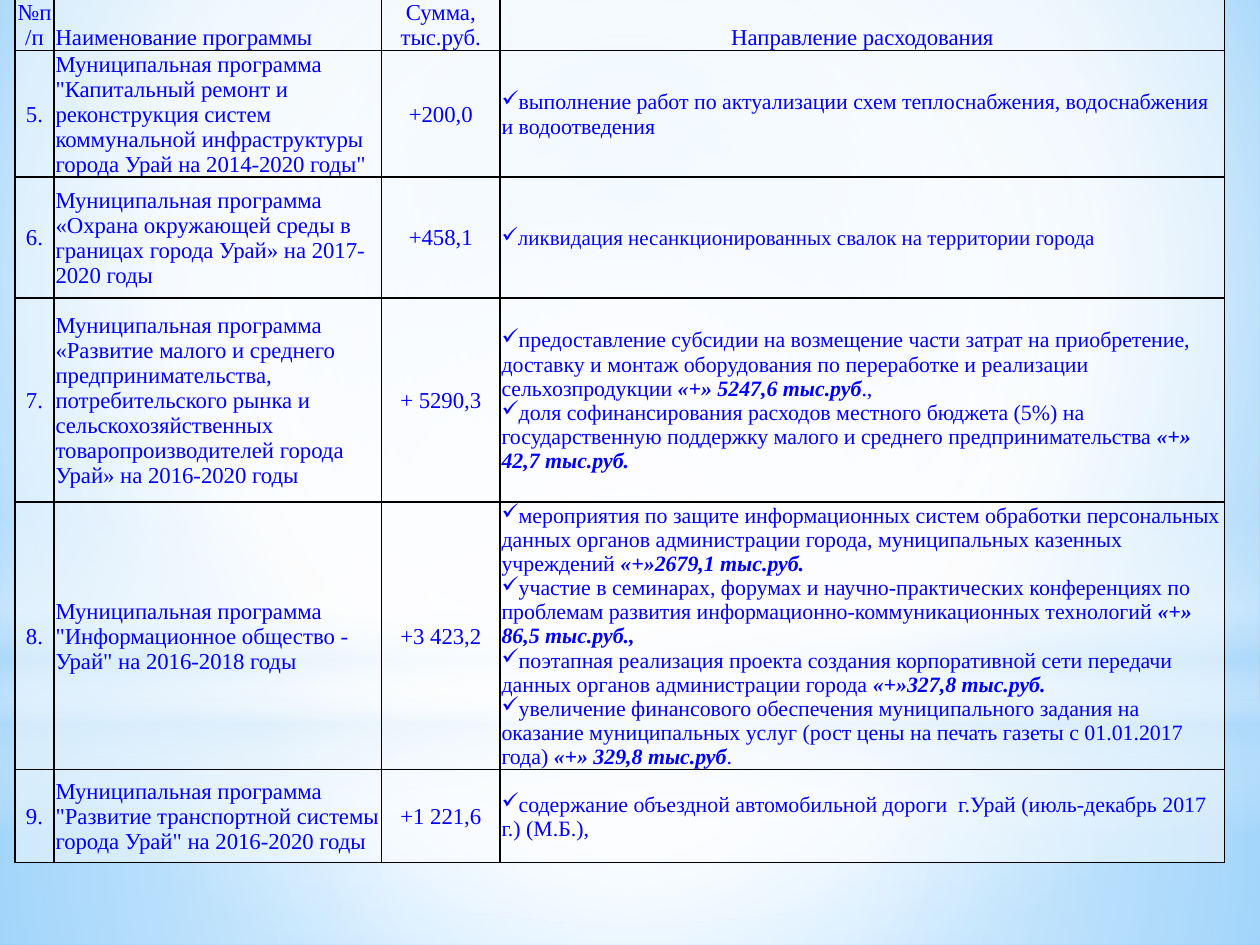
from lxml.etree import SubElement
from pptx import Presentation
from pptx.dml.color import RGBColor
from pptx.enum.shapes import MSO_SHAPE as Preset
from pptx.enum.text import MSO_ANCHOR as Anchor, PP_ALIGN as Align
from pptx.oxml.ns import qn
from pptx.util import Cm, Pt

COLORS = {
    "text": "0000FF", "border": "000000", "white": "FFFFFF",
    "haze": "B4DCFA", "sky": "9ED5FF", "deep": "5BB9FF",
}
FONT = "Times New Roman"
COLUMN_WIDTHS = [0.79, 6.6, 2.39, 14.6]
ROW_HEIGHTS = [1.03, 2.54, 2.44, 4.11, 5.38, 1.88]
HEADINGS = ["№п/п", "Наименование программы", "Сумма, тыс.руб.", "Направление расходования"]
PROGRAMS = [
    ("5.", 'Муниципальная программа "Капитальный ремонт и реконструкция систем коммунальной '
     'инфраструктуры города Урай на 2014-2020 годы"', "+200,0", 12.5,
     [["выполнение работ по актуализации схем теплоснабжения, водоснабжения и водоотведения"]]),
    ("6.", "Муниципальная программа «Охрана окружающей среды в границах города Урай» "
     "на 2017-2020 годы", "+458,1", 12,
     [["ликвидация несанкционированных свалок на территории города"]]),
    ("7.", "Муниципальная программа «Развитие малого и среднего предпринимательства, "
     "потребительского рынка и сельскохозяйственных товаропроизводителей города Урай» "
     "на 2016-2020 годы", "+ 5290,3", 12.5,
     [["предоставление субсидии на возмещение части затрат на приобретение, доставку и монтаж "
       "оборудования по переработке и реализации сельхозпродукции ", "«+» 5247,6 тыс.руб", ".,"],
      ["доля софинансирования расходов местного бюджета (5%) на государственную поддержку "
       "малого и среднего предпринимательства ", "«+» 42,7 тыс.руб."]]),
    ("8.", 'Муниципальная программа "Информационное общество - Урай" на 2016-2018 годы',
     "+3 423,2", 12.5,
     [["мероприятия по защите информационных систем обработки персональных данных органов "
       "администрации города, муниципальных казенных учреждений ", "«+»2679,1 тыс.руб."],
      ["участие в семинарах, форумах и научно-практических конференциях по проблемам развития "
       "информационно-коммуникационных технологий ", "«+» 86,5 тыс.руб.,"],
      ["поэтапная реализация проекта создания корпоративной сети передачи данных органов "
       "администрации города ", "«+»327,8 тыс.руб."],
      ["увеличение финансового обеспечения муниципального задания на оказание муниципальных "
       "услуг (рост цены на печать газеты с 01.01.2017 года) ", "«+» 329,8 тыс.руб", "."]]),
    ("9.", 'Муниципальная программа "Развитие транспортной системы города Урай" '
     "на 2016-2020 годы", "+1 221,6", 12.5,
     [["содержание объездной автомобильной дороги  г.Урай (июль-декабрь 2017 г.) (М.Б.),"]]),
]


def add_color(parent, name, opacity=100):
    color = SubElement(parent, qn("a:srgbClr"), val=COLORS[name])
    if opacity < 100:
        SubElement(color, qn("a:alpha"), val=str(opacity * 1000))


def set_gradient(owner, stops, focus=None):
    solid = owner.find(qn("a:solidFill"))
    gradient = SubElement(owner, qn("a:gradFill"), rotWithShape="1")
    owner.replace(solid, gradient)
    stop_list = SubElement(gradient, qn("a:gsLst"))
    for position, name, opacity in stops:
        stop = SubElement(stop_list, qn("a:gs"), pos=str(position * 1000))
        add_color(stop, name, opacity)
    if focus:
        circle = SubElement(gradient, qn("a:path"), path="circle")
        sides = {side: str(value * 1000) for side, value in zip("ltrb", focus)}
        SubElement(circle, qn("a:fillToRect"), **sides)
    else:
        SubElement(gradient, qn("a:lin"), ang="5400000", scaled="0")


def add_glow(slide, preset, top, height, stops, focus=None):
    glow = slide.shapes.add_shape(preset, 0, Cm(top), Cm(25.4), Cm(height))
    glow.shadow.inherit = False
    glow.line.fill.background()
    glow.fill.solid()
    set_gradient(glow._element.spPr, stops, focus)


def add_sky(slide):
    slide.background.fill.solid()
    set_gradient(slide._element.cSld.bg.bgPr,
                 [(0, "sky", 100), (60, "white", 100), (100, "deep", 100)], (20, 10, 20, 60))
    center = (50, 50, 50, 50)
    add_glow(slide, Preset.RECTANGLE, 14.17, 4.88,
             [(0, "white", 91), (37, "white", 76), (100, "haze", 79)], center)
    add_glow(slide, Preset.RECTANGLE, 0, 14.17,
             [(0, "white", 89), (48, "white", 62), (100, "haze", 79)], center)
    add_glow(slide, Preset.RECTANGLE, 10.46, 6.35,
             [(0, "white", 0), (29, "white", 30), (45, "haze", 40),
              (55, "white", 26), (65, "haze", 60), (100, "white", 0)])
    add_glow(slide, Preset.OVAL, 4.45, 14.17, [(0, "white", 100), (56, "white", 0)], center)


def style_cell(cell, anchor):
    cell.vertical_anchor = anchor
    cell.margin_left = cell.margin_right = cell.margin_top = Cm(0.03)
    cell.margin_bottom = 0
    properties = cell._tc.get_or_add_tcPr()
    for side in ("a:lnL", "a:lnR", "a:lnT", "a:lnB"):
        border = SubElement(properties, qn(side), w=str(Pt(1)))
        add_color(SubElement(border, qn("a:solidFill")), "border")
    add_color(SubElement(properties, qn("a:solidFill")), "white", 47)


def style_run(run, size, emphasis=False):
    run.font.name = FONT
    run.font.size = Pt(size)
    run.font.color.rgb = RGBColor.from_string(COLORS["text"])
    run.font.bold = run.font.italic = emphasis


def fill_label(cell, label, align):
    paragraph = cell.text_frame.paragraphs[0]
    paragraph.text = label
    paragraph.alignment = align
    style_run(paragraph.runs[0], 13)


def fill_expenses(cell, expenses, size):
    frame = cell.text_frame
    for index, parts in enumerate(expenses):
        paragraph = frame.add_paragraph() if index else frame.paragraphs[0]
        properties = paragraph._p.get_or_add_pPr()
        properties.set("marL", "0")
        properties.set("indent", "0")
        SubElement(properties, qn("a:buChar"), char="✓")
        for position, part in enumerate(parts):
            run = paragraph.add_run()
            run.text = part
            style_run(run, size, emphasis=position == 1)


def add_programs_table(slide, left, top):
    table = slide.shapes.add_table(
        len(ROW_HEIGHTS), len(COLUMN_WIDTHS), Cm(left), Cm(top),
        Cm(sum(COLUMN_WIDTHS)), Cm(sum(ROW_HEIGHTS))).table
    table.first_row = table.horz_banding = False
    for column, width in zip(table.columns, COLUMN_WIDTHS):
        column.width = Cm(width)
    for row, height in zip(table.rows, ROW_HEIGHTS):
        row.height = Cm(height)
    aligns = [Align.CENTER, Align.LEFT, Align.CENTER, Align.CENTER]
    for column, (heading, align) in enumerate(zip(HEADINGS, aligns)):
        cell = table.cell(0, column)
        style_cell(cell, Anchor.BOTTOM)
        fill_label(cell, heading, align)
    for row, (*labels, size, expenses) in enumerate(PROGRAMS, start=1):
        for column in range(len(COLUMN_WIDTHS)):
            style_cell(table.cell(row, column), Anchor.MIDDLE)
        for column, label in enumerate(labels):
            fill_label(table.cell(row, column), label, aligns[column])
        fill_expenses(table.cell(row, 3), expenses, size)


def main():
    deck = Presentation()
    deck.slide_width, deck.slide_height = Cm(25.4), Cm(19.05)
    slide = deck.slides.add_slide(deck.slide_layouts[6])
    add_sky(slide)
    add_programs_table(slide, left=0.3, top=-0.02)
    deck.save("out.pptx")


if __name__ == "__main__":
    main()
